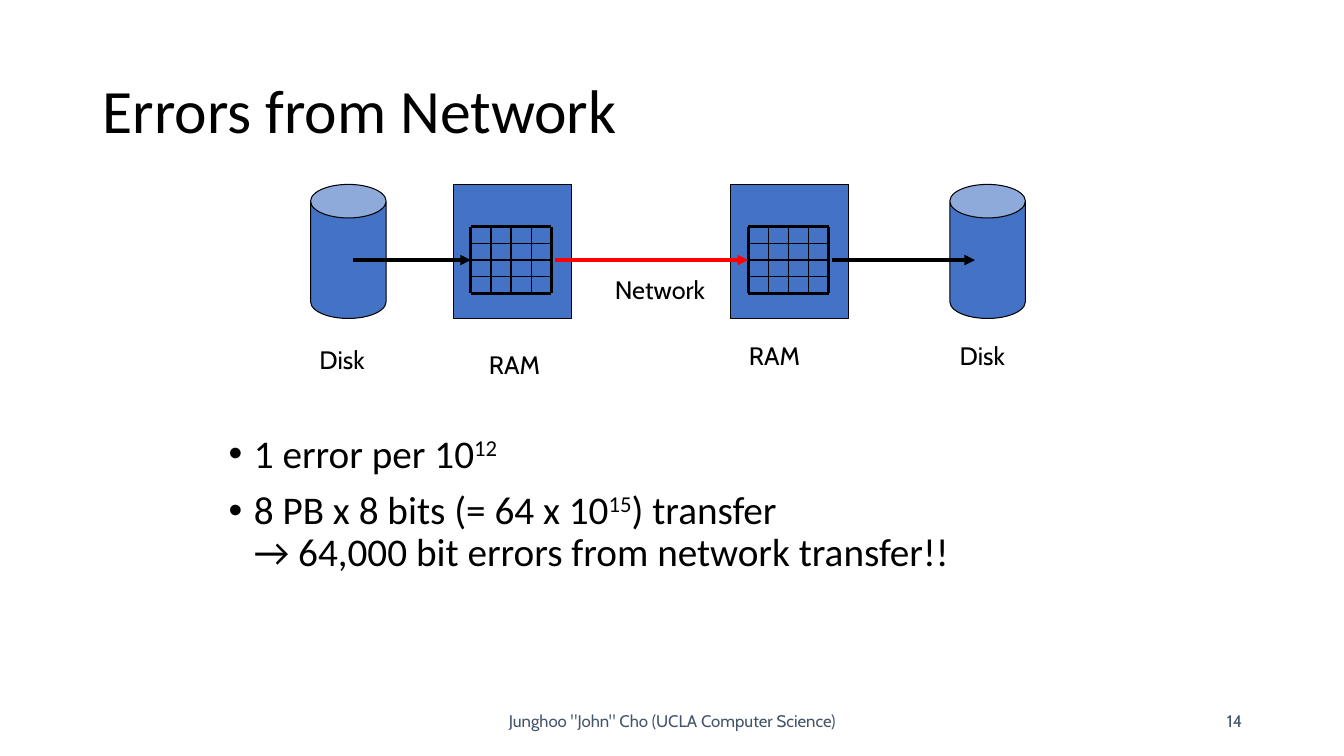
from pptx import Presentation
from pptx.dml.color import RGBColor
from pptx.enum import shapes, text
from pptx.oxml import ns, xmlchemy
from pptx.util import Inches, Pt

THEME = {
    "heading_font": "Calibri", "label_font": "Cabin",
    "title_size": 44, "body_size": 28, "label_size": 18, "footer_size": 12,
    "black": "000000", "blue": "4472C4", "red": "FF0000", "slate": "44546A",
    "outline": 0.75, "thin": 1, "thick": 2.25, "arrow": 2.5,
}
ALIGN, ANCHOR = text.PP_ALIGN, text.MSO_ANCHOR

TITLE = "Errors from Network"
FOOTER = 'Junghoo "John" Cho (UCLA Computer Science)'
PAGE_NUMBER = "14"
# Each bullet is a list of lines; each line a list of (wording, is superscript)
BULLETS = [
    [[("1 error per 10", False), ("12", True)]],
    [[("8 PB x 8 bits (= 64 x 10", False), ("15", True), (") transfer", False)],
     [("→ 64,000 bit errors from network transfer!!", False)]],
]
LABELS = [  # wording, left, top, width
    ("Disk", 3.07, 3.37, 0.69), ("RAM", 4.75, 3.42, 0.72),
    ("Network", 6, 2.67, 1.14),
    ("RAM", 7.33, 3.33, 0.72), ("Disk", 9.42, 3.33, 0.69),
]
DEVICE_TOP, DEVICE_HEIGHT = 1.83, 1.33
DISK_LEFTS, DISK_WIDTH, DISK_LID = (3.08, 9.42), 0.75, 0.444
RAM_LEFTS, RAM_WIDTH = (4.5, 7.25), 1.17
GRID_INSET, GRID_TOP, GRID_WIDTH, GRID_HEIGHT, GRID_CELLS = 0.17, 2.25, 0.8, 0.66, 4
ARROW_Y = GRID_TOP + GRID_HEIGHT / 2
ARROWS = [(3.5, 4.67, "black"), (5.5, 7.42, "red"), (8.25, 9.67, "black")]


def color(name):
    return RGBColor.from_string(THEME[name])


def add_run(paragraph, wording, **font_format):
    run = paragraph.add_run()
    run.text = wording
    font_format = {"name": THEME["label_font"], "size": Pt(THEME["label_size"]),
                   **font_format}
    for attribute, value in font_format.items():
        setattr(run.font, attribute, value)
    run.font.color.rgb = color("black")
    return run


def add_text_box(slide, box, wrap=True, anchor=ANCHOR.TOP):
    frame = slide.shapes.add_textbox(*map(Inches, box)).text_frame
    frame.word_wrap, frame.vertical_anchor = wrap, anchor
    return frame


def add_device(slide, kind, left, width):
    shape = slide.shapes.add_shape(
        kind, *map(Inches, (left, DEVICE_TOP, width, DEVICE_HEIGHT)))
    shape.shadow.inherit = False
    shape.fill.solid()
    shape.fill.fore_color.rgb = color("blue")
    shape.line.color.rgb = color("black")
    shape.line.width = Pt(THEME["outline"])
    return shape


def add_line(slide, start, end, weight, line_color="black", arrow=False):
    line = slide.shapes.add_connector(
        shapes.MSO_CONNECTOR.STRAIGHT, *map(Inches, start + end))
    line.line.color.rgb = color(line_color)
    line.line.width = Pt(THEME[weight])
    if arrow:
        head = xmlchemy.OxmlElement("a:tailEnd")
        head.set("type", "triangle")
        line.line._get_or_add_ln().append(head)
    properties = line._element.find(ns.qn("p:spPr"))
    properties.append(xmlchemy.OxmlElement("a:effectLst"))


def add_ram(slide, left):
    """Draw a RAM block with its grid of memory cells."""
    add_device(slide, shapes.MSO_SHAPE.RECTANGLE, left, RAM_WIDTH)
    grid_left = left + GRID_INSET
    right, bottom = grid_left + GRID_WIDTH, GRID_TOP + GRID_HEIGHT
    for index in range(GRID_CELLS + 1):
        weight = "thick" if index in (0, GRID_CELLS) else "thin"
        x = grid_left + GRID_WIDTH * index / GRID_CELLS
        y = GRID_TOP + GRID_HEIGHT * index / GRID_CELLS
        add_line(slide, (grid_left, y), (right, y), weight)
        add_line(slide, (x, GRID_TOP), (x, bottom), weight)


def add_bullets(slide):
    frame = add_text_box(slide, (2.17, 4.26, 9, 2.56))
    for index, lines in enumerate(BULLETS):
        paragraph = frame.paragraphs[0] if index == 0 else frame.add_paragraph()
        paragraph.line_spacing, paragraph.space_after = 0.9, Pt(10)
        properties = paragraph._p.get_or_add_pPr()
        properties.set("marL", str(Inches(0.25)))
        properties.set("indent", str(-Inches(0.25)))
        for tag, key, value in (("a:buFont", "typeface", "Arial"),
                                ("a:buChar", "char", "•")):
            element = xmlchemy.OxmlElement(tag)
            element.set(key, value)
            properties.append(element)
        for line_index, line in enumerate(lines):
            if line_index:
                paragraph.add_line_break()
            for wording, superscript in line:
                run = add_run(paragraph, wording, name=THEME["heading_font"],
                              size=Pt(THEME["body_size"]))
                if superscript:
                    run.font._element.set("baseline", "30000")


def add_title_and_footer(slide):
    frame = add_text_box(slide, (0.92, 0.4, 11.5, 1.45), anchor=ANCHOR.MIDDLE)
    frame.paragraphs[0].line_spacing = 0.9
    add_run(frame.paragraphs[0], TITLE, name=THEME["heading_font"],
            size=Pt(THEME["title_size"]))
    for wording, left, width, alignment in ((FOOTER, 4.42, 4.5, ALIGN.CENTER),
                                            (PAGE_NUMBER, 9.42, 3, ALIGN.RIGHT)):
        frame = add_text_box(slide, (left, 6.95, width, 0.4), anchor=ANCHOR.MIDDLE)
        frame.paragraphs[0].alignment = alignment
        run = add_run(frame.paragraphs[0], wording, size=Pt(THEME["footer_size"]))
        run.font.color.rgb = color("slate")


def main():
    presentation = Presentation()
    presentation.slide_width, presentation.slide_height = Inches(13.33), Inches(7.5)
    slide = presentation.slides.add_slide(presentation.slide_layouts[6])
    add_title_and_footer(slide)
    add_bullets(slide)
    for left in DISK_LEFTS:
        disk = add_device(slide, shapes.MSO_SHAPE.CAN, left, DISK_WIDTH)
        disk.adjustments[0] = DISK_LID
    for left in RAM_LEFTS:
        add_ram(slide, left)
    for start, end, arrow_color in ARROWS:
        add_line(slide, (start, ARROW_Y), (end, ARROW_Y), "arrow", arrow_color, True)
    for wording, left, top, width in LABELS:
        frame = add_text_box(slide, (left, top, width, 0.4), wrap=False)
        frame.auto_size = text.MSO_AUTO_SIZE.SHAPE_TO_FIT_TEXT
        add_run(frame.paragraphs[0], wording)
    presentation.save("out.pptx")


if __name__ == "__main__":
    main()
